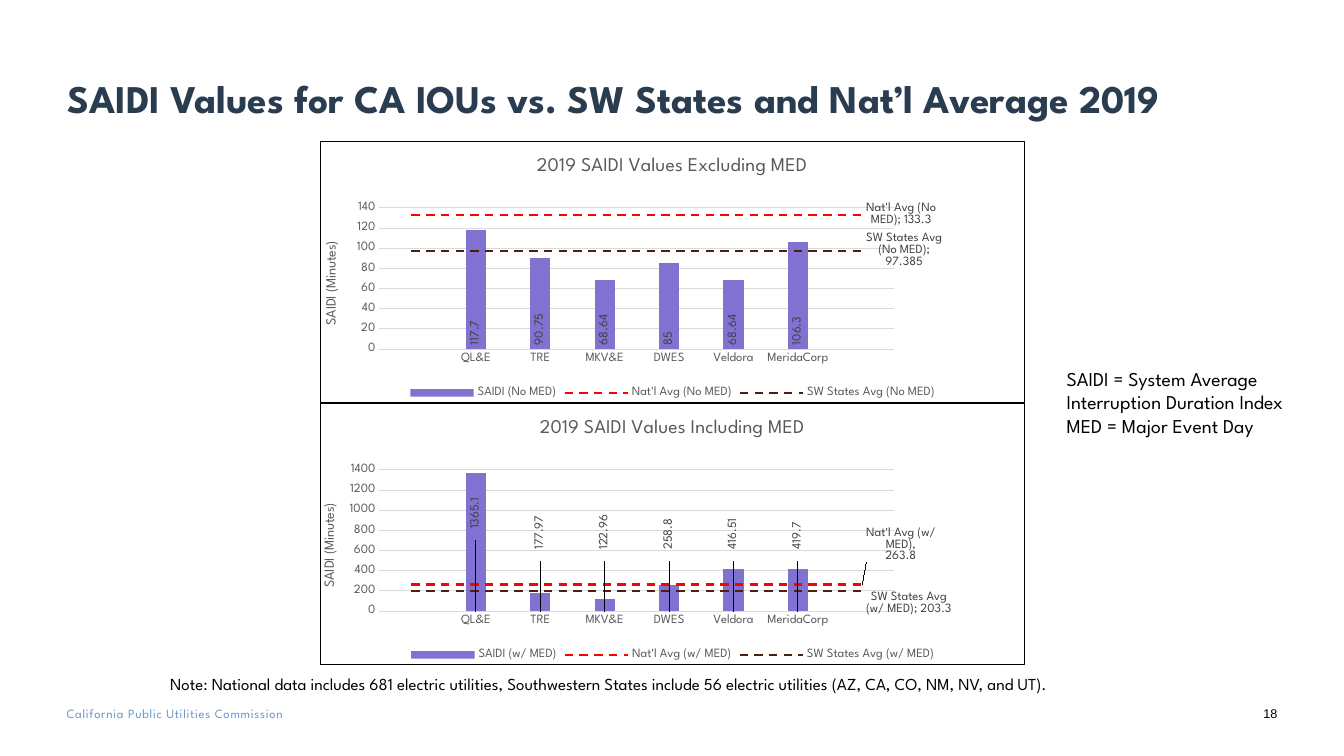
from lxml import etree
from pptx import Presentation
from pptx.chart.data import CategoryChartData
from pptx.dml.color import RGBColor
from pptx.enum.chart import XL_CHART_TYPE as ChartType, XL_LEGEND_POSITION as LegendPosition
from pptx.enum.chart import XL_MARKER_STYLE as MarkerStyle, XL_TICK_MARK as TickMark
from pptx.enum.dml import MSO_LINE
from pptx.enum.text import MSO_ANCHOR, MSO_AUTO_SIZE, PP_ALIGN
from pptx.oxml import parse_xml
from pptx.oxml.ns import nsdecls, qn
from pptx.util import Inches, Pt

FONT = "League Spartan"
COLORS = {
    "title": "2A3C50", "footer": "6996C9", "black": "000000",
    "axis": "595959", "label": "404040", "grid": "D9D9D9",
    "bar": "8072D0", "national": "FF0000", "southwest": "4C200F",
}
UTILITIES = ["", "QL&E", "TRE", "MKV&E", "DWES", "Veldora", "MeridaCorp", ""]
LAST = len(UTILITIES) - 1


def color(name):
    return RGBColor.from_string(COLORS[name])


def set_font(font, size, name, face=FONT, bold=False):
    font.name = face
    font.size = Pt(size)
    font.bold = bold
    font.color.rgb = color(name)


def set_line(line, name, width):
    line.color.rgb = color(name)
    line.width = Pt(width)


def add_title(page, text):
    title = page.shapes.title
    title.left, title.top, title.width, title.height = map(Inches, (0.67, 0.4, 12, 0.86))
    frame = title.text_frame
    frame.text = text
    frame.word_wrap = True
    frame.auto_size = MSO_AUTO_SIZE.NONE
    frame.vertical_anchor = MSO_ANCHOR.BOTTOM
    frame.margin_left = 0
    para = frame.paragraphs[0]
    para.alignment = PP_ALIGN.LEFT
    para.line_spacing = 0.9
    set_font(para.font, 28, "title", bold=True)


def add_text(page, place, lines, size, name="black", face=FONT, margins=True):
    box = page.shapes.add_textbox(*map(Inches, place))
    frame = box.text_frame
    frame.word_wrap = True
    if not margins:
        frame.margin_left = frame.margin_top = frame.margin_right = frame.margin_bottom = 0
    frame.text = "\n".join(lines)
    for para in frame.paragraphs:
        set_font(para.font, size, name, face)
    return frame.paragraphs[0]


def label_format(rotation, show_series, position, separator):
    return (
        f'<c:spPr><a:noFill/><a:ln><a:noFill/></a:ln></c:spPr>'
        f'<c:txPr><a:bodyPr rot="{rotation}" vert="horz"/><a:p><a:pPr><a:defRPr sz="900" b="0">'
        f'<a:solidFill><a:srgbClr val="{COLORS["label"]}"/></a:solidFill>'
        f'<a:latin typeface="{FONT}"/></a:defRPr></a:pPr><a:endParaRPr lang="en-US"/></a:p></c:txPr>'
        f'<c:dLblPos val="{position}"/><c:showLegendKey val="0"/><c:showVal val="1"/>'
        f'<c:showCatName val="0"/><c:showSerName val="{show_series}"/><c:showPercent val="0"/>'
        f'<c:showBubbleSize val="0"/><c:separator>{separator}</c:separator>'
    )


def add_labels(series, layout, shifts, hidden=()):
    points = "".join(f'<c:dLbl><c:idx val="{index}"/><c:delete val="1"/></c:dLbl>' for index in hidden)
    points += "".join(
        f'<c:dLbl><c:idx val="{index}"/><c:layout><c:manualLayout><c:x val="0"/>'
        f'<c:y val="{shift}"/></c:manualLayout></c:layout>{layout}</c:dLbl>'
        for index, shift in shifts.items()
    )
    labels = parse_xml(f'<c:dLbls {nsdecls("c", "a")}>{points}{layout}</c:dLbls>')
    series._element.find(qn("c:cat")).addprevious(labels)


def move_averages_to_lines(chart):
    bars = chart.plots[0]._element
    lines = parse_xml(
        f'<c:lineChart {nsdecls("c")}><c:grouping val="standard"/><c:varyColors val="0"/></c:lineChart>'
    )
    for series in bars.findall(qn("c:ser"))[1:]:
        for flag in series.findall(qn("c:invertIfNegative")):
            series.remove(flag)
        lines.append(series)
    etree.SubElement(lines, qn("c:marker")).set("val", "1")
    for axis in bars.findall(qn("c:axId")):
        etree.SubElement(lines, qn("c:axId")).set("val", axis.get("val"))
    bars.addnext(lines)


def style_axes(chart, top, step):
    values, utilities = chart.value_axis, chart.category_axis
    for axis in (values, utilities):
        axis.major_tick_mark = axis.minor_tick_mark = TickMark.NONE
        set_font(axis.tick_labels.font, 9, "axis")
    values.minimum_scale, values.maximum_scale, values.major_unit = 0, top, step
    values.has_major_gridlines = True
    set_line(values.major_gridlines.format.line, "grid", 0.75)
    values.format.line.fill.background()
    set_line(utilities.format.line, "grid", 0.75)
    values.axis_title.text_frame.text = "SAIDI (Minutes)"
    set_font(values.axis_title.text_frame.paragraphs[0].font, 10, "axis")


def style_frame(chart, heading):
    set_font(chart.font, 10, "black")
    chart.has_title = True
    chart.chart_title.text_frame.text = heading
    set_font(chart.chart_title.text_frame.paragraphs[0].font, 14, "axis")
    chart.has_legend = True
    chart.legend.position = LegendPosition.BOTTOM
    chart.legend.include_in_layout = False
    set_font(chart.legend.font, 9, "axis")
    border = parse_xml(
        f'<c:spPr {nsdecls("c", "a")}><a:noFill/><a:ln w="{Pt(0.75)}"><a:solidFill>'
        f'<a:srgbClr val="{COLORS["black"]}"/></a:solidFill></a:ln></c:spPr>'
    )
    space = chart._chartSpace
    space.find(qn("c:txPr")).addprevious(border)
    plot_area = space.find(qn("c:chart")).find(qn("c:plotArea"))
    for old in plot_area.findall(qn("c:layout")):
        plot_area.remove(old)
    plot_area.insert(0, parse_xml(
        f'<c:layout {nsdecls("c")}><c:manualLayout><c:layoutTarget val="inner"/>'
        '<c:xMode val="edge"/><c:yMode val="edge"/><c:x val="0.084"/><c:y val="0.254"/>'
        '<c:w val="0.731"/><c:h val="0.541"/></c:manualLayout></c:layout>'
    ))


def add_saidi_chart(page, top, heading, scope, values, averages, scale, bar_shifts, line_shifts, separators):
    data = CategoryChartData()
    data.categories = UTILITIES
    data.add_series(f"SAIDI ({scope})", [None, *values, None])
    for region, average in zip(("Nat'l", "SW States"), averages):
        data.add_series(f"{region} Avg ({scope})", [average] * len(UTILITIES))
    chart = page.shapes.add_chart(
        ChartType.COLUMN_CLUSTERED, Inches(3.17), Inches(top), Inches(7), Inches(2.6), data
    ).chart
    style_frame(chart, heading)
    style_axes(chart, *scale)
    move_averages_to_lines(chart)
    bars, lines = chart.plots
    bars.gap_width = 219
    bars.overlap = -27
    bars.vary_by_categories = False
    bar = bars.series[0]
    bar.format.fill.solid()
    bar.format.fill.fore_color.rgb = color("bar")
    add_labels(bar, label_format(-5400000, 0, "inBase", "; "), bar_shifts)
    for series, name, shift, separator in zip(lines.series, ("national", "southwest"), line_shifts, separators):
        set_line(series.format.line, name, 1.5)
        series.format.line.dash_style = MSO_LINE.DASH
        series.marker.style = MarkerStyle.NONE
        series.smooth = False
        add_labels(series, label_format(0, 1, "r", separator), {LAST: shift}, range(LAST))


def main():
    deck = Presentation()
    deck.slide_width, deck.slide_height = Inches(13.33), Inches(7.5)
    page = deck.slides.add_slide(deck.slide_layouts[5])
    add_title(page, "SAIDI Values for CA IOUs vs. SW States and Nat’l Average 2019")
    footer = add_text(page, (0.66, 7, 3.21, 0.15), ["California Public Utilities Commission"], 9, "footer", margins=False)
    footer.runs[0].font._element.set("spc", "50")
    number = add_text(page, (12.25, 7, 0.42, 0.2), ["18"], 9, face="Arial", margins=False)
    number.alignment = PP_ALIGN.RIGHT
    add_saidi_chart(
        page, 1.4, "2019 SAIDI Values Excluding MED", "No MED",
        [117.7, 90.75, 68.64, 85, 68.64, 106.3], (133.3, 97.385), (140, 20),
        {}, (0, 0), ("; ", "; "),
    )
    add_saidi_chart(
        page, 4, "2019 SAIDI Values Including MED", "w/ MED",
        [1365.1, 177.97, 122.96, 258.8, 416.51, 419.7], (263.8, 203.3), (1400, 200),
        {1: -0.3, **dict.fromkeys(range(2, LAST), -0.22)}, (-0.15, 0.05), (",\n", "; "),
    )
    note = add_text(page, (1.28, 6.63, 10.77, 0.3), [
        "Note: National data includes 681 electric utilities, Southwestern States include "
        "56 electric utilities (AZ, CA, CO, NM, NV, and UT)."
    ], 12)
    indents = note._p.get_or_add_pPr()
    indents.set("marL", str(Inches(0.44)))
    indents.set("indent", str(Inches(-0.13)))
    add_text(page, (10.48, 3.59, 2.72, 0.81), [
        "SAIDI = System Average Interruption Duration Index", "MED = Major Event Day"
    ], 14)
    deck.save("out.pptx")


if __name__ == "__main__":
    main()
